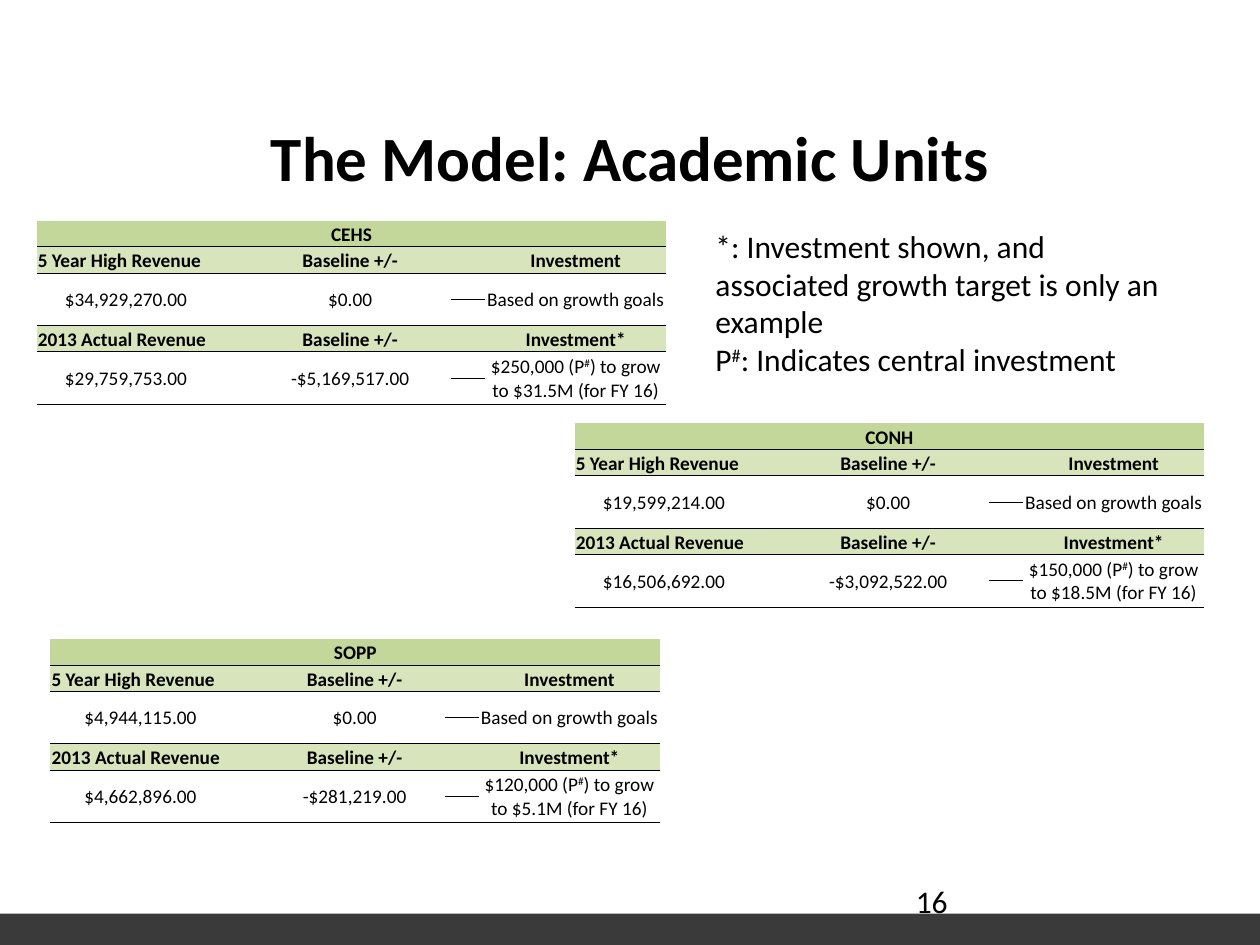
from lxml import etree
from pptx import Presentation, util as u
from pptx.dml.color import RGBColor
from pptx.enum import shapes, text
from pptx.oxml import ns

COLORS = {"ink": "000000", "bar": "3A3A3A", "title": "C4D79B", "heading": "D8E4BC"}
NO_GRID_STYLE = "{2D5ABB26-0587-4C30-8999-92F81FD0307C}"
CENTER, LEFT = text.PP_ALIGN.CENTER, text.PP_ALIGN.LEFT


def write(para, content, size, bold=False, align=LEFT):
    """Write one paragraph; each # is raised."""
    para.alignment = align
    before, mark, after = content.partition("#")
    for part in filter(None, (before, mark, after)):
        span = para.add_run()
        span.text = part
        for name, value in {"size": u.Pt(size), "name": "Calibri", "bold": bold}.items():
            setattr(span.font, name, value)
        span.font.color.rgb = RGBColor.from_string(COLORS["ink"])
        if part == "#":
            span.font._element.set("baseline", "30000")


def add_rule(cell, tag):
    """Draw a thin line along one edge of a cell; call lnB before lnT."""
    line = etree.Element(ns.qn(f"a:{tag}"), w=str(u.Pt(0.5)))
    fill = etree.SubElement(line, ns.qn("a:solidFill"))
    etree.SubElement(fill, ns.qn("a:srgbClr"), val=COLORS["ink"])
    cell._tc.get_or_add_tcPr().insert(0, line)


deck = Presentation()
deck.slide_width, deck.slide_height = u.Inches(10), u.Inches(7.5)
page = deck.slides.add_slide(deck.slide_layouts[6])

# Footer bar
bar = page.shapes.add_shape(shapes.MSO_SHAPE.RECTANGLE, 0, u.Inches(7.25),
                            u.Inches(10), u.Inches(0.25))
bar.shadow.inherit = False
bar.fill.solid()
bar.fill.fore_color.rgb = RGBColor.from_string(COLORS["bar"])
bar.line.fill.background()

# Title, footnotes and page number
top, middle = text.MSO_ANCHOR.TOP, text.MSO_ANCHOR.MIDDLE
notes = ["*: Investment shown, and associated growth target is only an example",
         "P#: Indicates central investment"]
for place, lines, size, bold, align, anchor in [
    ((0.5, 0.84, 9, 0.8), ["The Model: Academic Units"], 36, True, CENTER, middle),
    ((5.58, 1.75, 3.92, 1.31), notes, 18, False, LEFT, top),
    ((7.17, 6.95, 2.33, 0.4), ["16"], 18, False, LEFT, top),
]:
    frame = page.shapes.add_textbox(*map(u.Inches, place)).text_frame
    frame.word_wrap, frame.vertical_anchor = True, anchor
    for index, content in enumerate(lines):
        para = frame.add_paragraph() if index else frame.paragraphs[0]
        write(para, content, size, bold, align)

# Revenue tables, one for each academic unit
wide = [1.42, 0.27, 1.6, 0.27, 1.44]
narrow = [1.43, 0.27, 1.43, 0.27, 1.44]
row_height = 1.46 / 7
units = [
    ("CEHS", 0.29, 1.75, wide, "$34,929,270.00", "$29,759,753.00", "-$5,169,517.00",
     "$250,000 (P#) to grow to $31.5M (for FY 16)"),
    ("CONH", 4.56, 3.36, wide, "$19,599,214.00", "$16,506,692.00", "-$3,092,522.00",
     "$150,000 (P#) to grow to $18.5M (for FY 16)"),
    ("SOPP", 0.4, 5.07, narrow, "$4,944,115.00", "$4,662,896.00", "-$281,219.00",
     "$120,000 (P#) to grow to $5.1M (for FY 16)"),
]
for name, left, top_edge, widths, high, actual, change, investment in units:
    holder = page.shapes.add_table(7, 5, u.Inches(left), u.Inches(top_edge),
                                   u.Inches(sum(widths)), u.Inches(1.46))
    table = holder.table
    table.first_row = table.horz_banding = False
    table._tbl.tblPr.find(ns.qn("a:tableStyleId")).text = NO_GRID_STYLE
    for column, width in zip(table.columns, widths):
        column.width = u.Inches(width)
    for row in table.rows:
        row.height = u.Inches(row_height)

    # Merged areas: the title across, the values over two rows
    table.cell(0, 0).merge(table.cell(0, 4))
    for row in (2, 5):
        for column in (0, 1, 2, 4):
            table.cell(row, column).merge(table.cell(row + 1, column))

    contents = {
        0: {0: name},
        1: {0: "5 Year High Revenue", 2: "Baseline +/-", 4: "Investment"},
        2: {0: high, 2: "$0.00", 4: "Based on growth goals"},
        4: {0: "2013 Actual Revenue", 2: "Baseline +/-", 4: "Investment*"},
        5: {0: actual, 2: change, 4: investment},
    }
    for row in range(7):
        heading = row in (0, 1, 4)
        for column in range(5):
            cell = table.cell(row, column)
            settings = {
                "margin_left": u.Inches(0.01), "margin_right": u.Inches(0.01),
                "margin_top": u.Inches(0.01), "margin_bottom": 0,
                "vertical_anchor": text.MSO_ANCHOR.BOTTOM if heading else middle,
            }
            for key, value in settings.items():
                setattr(cell, key, value)
            if heading:
                cell.fill.solid()
                shade = COLORS["heading" if row else "title"]
                cell.fill.fore_color.rgb = RGBColor.from_string(shade)
            else:
                cell.fill.background()
            if row not in (2, 5) or cell.is_merge_origin:
                add_rule(cell, "lnB")
            if row in (1, 2, 4, 5):
                add_rule(cell, "lnT")
            para = cell.text_frame.paragraphs[0]
            content = contents.get(row, {}).get(column)
            if content:
                align = LEFT if row in (1, 4) and column == 0 else CENTER
                write(para, content, 11, heading, align)
            else:
                # Small type keeps empty cells from stretching the row
                para._p.get_or_add_endParaRPr().set("sz", "1100")

deck.save("out.pptx")
